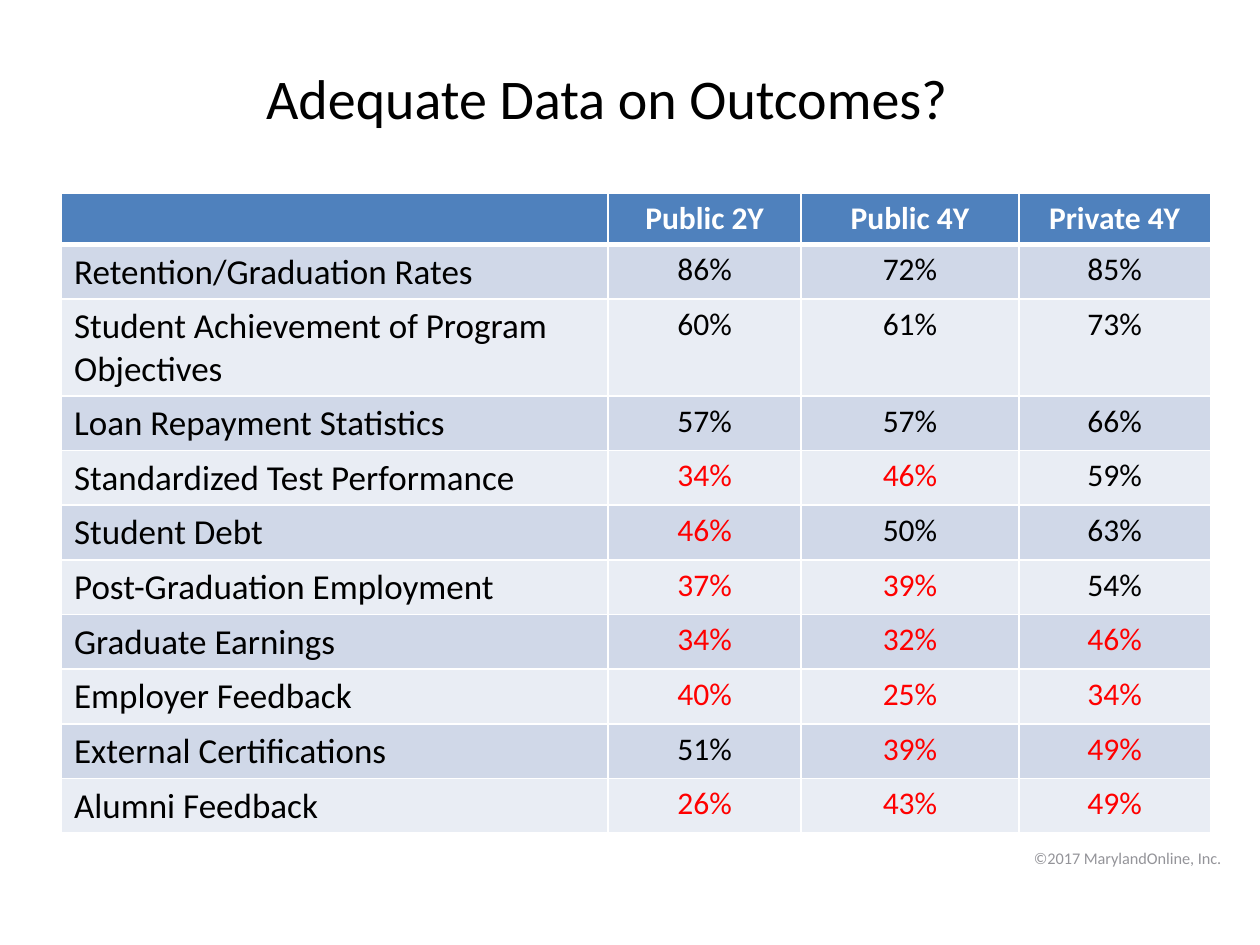
from lxml.etree import SubElement
from pptx import Presentation
from pptx.dml.color import RGBColor
from pptx.enum.text import MSO_ANCHOR, MSO_AUTO_SIZE, PP_ALIGN
from pptx.oxml.ns import qn
from pptx.util import Cm, Pt

FONT = "Calibri"
COLORS = {
    "head": "4F81BD",
    "odd": "D0D8E8",
    "even": "E9EDF4",
    "line": "FFFFFF",
    "white": "FFFFFF",
    "text": "000000",
    "low": "FF0000",
    "foot": "949499",
}
LIMIT = 50  # shares below this are shown in red
HEADS = ["", "Public 2Y", "Public 4Y", "Private 4Y"]
RATES = [
    ("Retention/Graduation Rates", 86, 72, 85),
    ("Student Achievement of Program Objectives", 60, 61, 73),
    ("Loan Repayment Statistics", 57, 57, 66),
    ("Standardized Test Performance", 34, 46, 59),
    ("Student Debt", 46, 50, 63),
    ("Post-Graduation Employment", 37, 39, 54),
    ("Graduate Earnings", 34, 32, 46),
    ("Employer Feedback", 40, 25, 34),
    ("External Certifications", 51, 39, 49),
    ("Alumni Feedback", 26, 43, 49),
]
WIDTHS = [11.02, 3.89, 4.39, 3.86]
ROW = 1.04


def rgb(name):
    return RGBColor.from_string(COLORS[name])


def write(frame, text, size, color, align=PP_ALIGN.LEFT, bold=False):
    frame.text = text
    para = frame.paragraphs[0]
    para.alignment = align
    for run in para.runs:
        font = run.font
        font.name, font.size, font.bold = FONT, Pt(size), bold
        font.color.rgb = rgb(color)


def place(shape, left, top, width, height):
    shape.left, shape.top = Cm(left), Cm(top)
    shape.width, shape.height = Cm(width), Cm(height)


def edge(cell, top, base):
    """Draw the cell borders; top and base are widths in points."""
    props = cell._tc.get_or_add_tcPr()
    for side, width in (("L", 1), ("R", 1), ("T", top), ("B", base)):
        line = SubElement(props, qn(f"a:ln{side}"), w=str(Pt(width)))
        fill = SubElement(line, qn("a:solidFill"))
        SubElement(fill, qn("a:srgbClr"), val=COLORS["line"])


def paint(cell, color):
    cell.fill.solid()
    cell.fill.fore_color.rgb = rgb(color)


def add_title(slide, text):
    title = slide.shapes.title
    place(title, 5.11, 0.84, 19.89, 2)
    frame = title.text_frame
    frame.word_wrap = True
    frame.auto_size = MSO_AUTO_SIZE.NONE
    frame.vertical_anchor = MSO_ANCHOR.MIDDLE
    frame.margin_top = Cm(0.35)
    write(frame, text, 32, "text")


def add_rates(slide):
    count = len(RATES) + 1
    table = slide.shapes.add_table(
        count, len(HEADS), Cm(1.24), Cm(3.89), Cm(sum(WIDTHS)), Cm(ROW * count)
    ).table
    for col, width in zip(table.columns, WIDTHS):
        col.width = Cm(width)
    for row in table.rows:
        row.height = Cm(ROW)
    for cell, head in zip(table.rows[0].cells, HEADS):
        edge(cell, 1, 3)
        paint(cell, "head")
        write(cell.text_frame, head, 18, "white", PP_ALIGN.CENTER, True)
    for pos, (label, *shares) in enumerate(RATES, 1):
        cells = list(table.rows[pos].cells)
        for cell in cells:
            edge(cell, 3 if pos == 1 else 1, 1)
            paint(cell, "odd" if pos % 2 else "even")
        write(cells[0].text_frame, label, 20, "text")
        for cell, share in zip(cells[1:], shares):
            color = "low" if share < LIMIT else "text"
            write(cell.text_frame, f"{share}%", 18, color, PP_ALIGN.CENTER)


def add_foot(slide, text):
    box = slide.shapes.add_textbox(Cm(0.69), Cm(16.84), Cm(24.18), Cm(1.07))
    frame = box.text_frame
    frame.word_wrap = True
    frame.vertical_anchor = MSO_ANCHOR.MIDDLE
    write(frame, text, 16, "foot", PP_ALIGN.RIGHT)
    run = frame.paragraphs[0].runs[0]
    run._r.get_or_add_rPr().set("baseline", "30000")


def main():
    deck = Presentation()
    deck.slide_width, deck.slide_height = Cm(25.4), Cm(19.05)
    slide = deck.slides.add_slide(deck.slide_layouts[5])
    add_foot(slide, "©2017 MarylandOnline, Inc.")
    add_title(slide, "Adequate Data on Outcomes?")
    add_rates(slide)
    deck.save("out.pptx")


if __name__ == "__main__":
    main()
